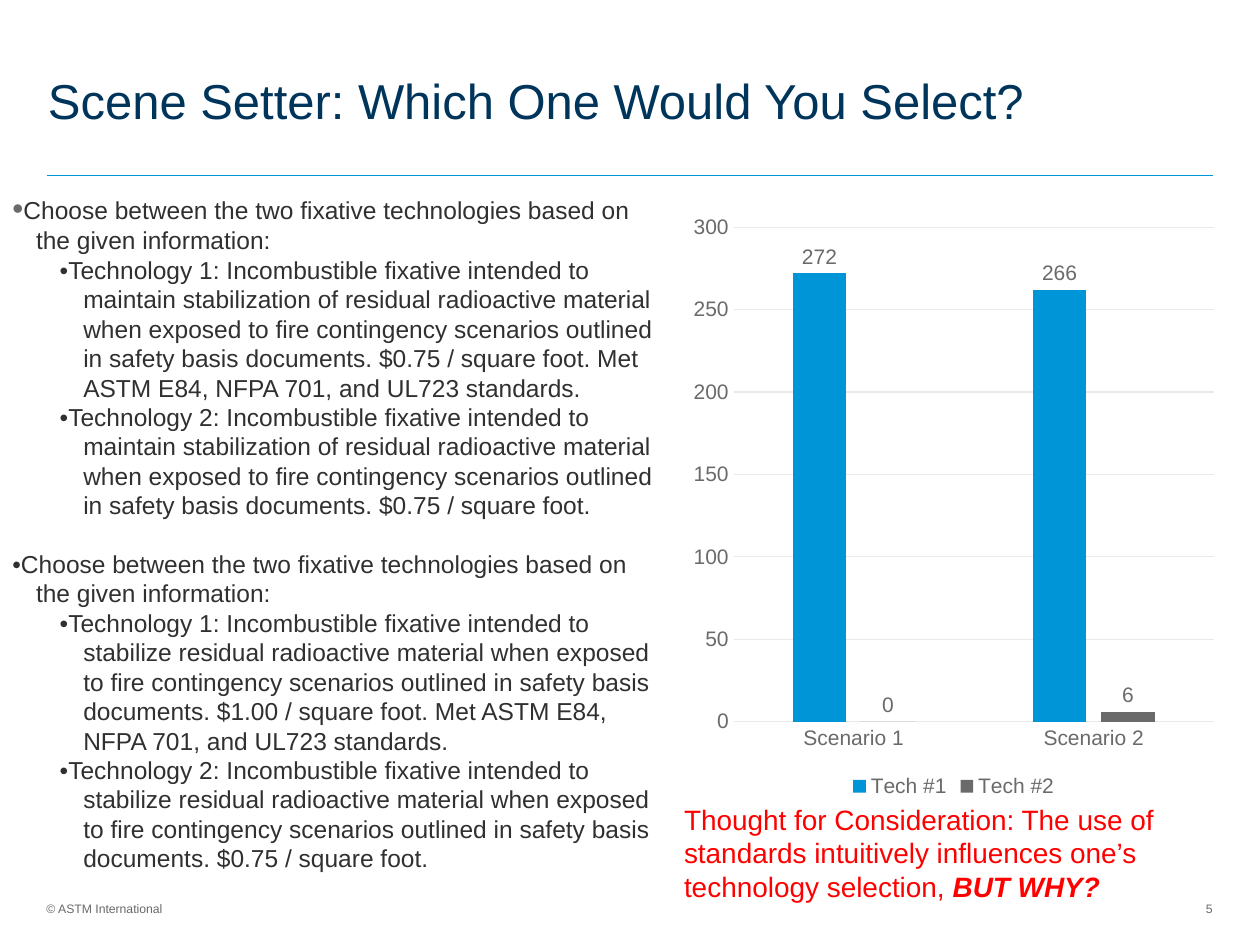
from lxml.etree import SubElement
from pptx import Presentation
from pptx.chart.data import CategoryChartData
from pptx.dml.color import RGBColor
from pptx.enum.chart import XL_CHART_TYPE, XL_LABEL_POSITION, XL_LEGEND_POSITION, XL_TICK_MARK
from pptx.enum.shapes import MSO_CONNECTOR
from pptx.enum.text import MSO_ANCHOR, PP_ALIGN
from pptx.oxml.ns import qn
from pptx.util import Pt

NAVY = RGBColor(0x00, 0x35, 0x5B)
BLUE = RGBColor(0x00, 0x95, 0xD6)
GRAY = RGBColor(0x6A, 0x6A, 0x6A)
INK = RGBColor(0x30, 0x30, 0x31)
PALE = RGBColor(0xE9, 0xE9, 0xE9)
RED = RGBColor(0xFF, 0x00, 0x00)


def style(font, size, color):
    font.name = "Arial"
    font.size = Pt(size)
    font.color.rgb = color


def add_text(left, top, width, height, inset=True):
    frame = slide.shapes.add_textbox(Pt(left), Pt(top), Pt(width), Pt(height)).text_frame
    frame.word_wrap = True
    if not inset:
        frame.margin_left = frame.margin_right = frame.margin_top = frame.margin_bottom = 0
    return frame


prs = Presentation()
prs.slide_width, prs.slide_height = Pt(720), Pt(540)
slide = prs.slides.add_slide(prs.slide_layouts[6])

# Title and rule
title = add_text(27.4, 25.2, 583, 67.7, inset=False)
title.vertical_anchor = MSO_ANCHOR.MIDDLE
heading = title.paragraphs[0]
heading.text = "Scene Setter: Which One Would You Select?"
heading.line_spacing = Pt(30)
style(heading.font, 28, NAVY)

rule = slide.shapes.add_connector(MSO_CONNECTOR.STRAIGHT, Pt(26.6), Pt(100), Pt(693.4), Pt(100))
rule.line.color.rgb = BLUE
rule.line.width = Pt(0.5)
SubElement(rule._element.spPr, qn("a:effectLst"))

# Footer
for left, top, width, text, align in [
    (26.6, 514.8, 81.4, "© ASTM International", PP_ALIGN.LEFT),
    (657.4, 515.2, 35.6, "5", PP_ALIGN.RIGHT),
]:
    footer = add_text(left, top, width, 9, inset=False).paragraphs[0]
    footer.text = text
    footer.alignment = align
    style(footer.font, 7, GRAY)

# Scenarios: purpose of the fixative, price of technology 1
scenarios = [
    ("maintain stabilization of residual radioactive material", "$0.75"),
    ("stabilize residual radioactive material", "$1.00"),
]
choices = add_text(0, 103.7, 384, 402.5)
for number, (purpose, price) in enumerate(scenarios):
    question = choices.add_paragraph() if number else choices.paragraphs[0]
    bullet = question.add_run()
    bullet.text = "•"
    question.add_run().text = "Choose between the two fixative technologies based on the given information:"
    style(question.font, 14, INK)
    if number:
        question.space_before = Pt(16.8)
    else:
        style(bullet.font, 18, GRAY)
    options = [(1, price, " Met ASTM E84, NFPA 701, and UL723 standards."), (2, "$0.75", "")]
    for technology, cost, standards in options:
        option = choices.add_paragraph()
        option.text = (
            f"•Technology {technology}: Incombustible fixative intended to {purpose} "
            "when exposed to fire contingency scenarios outlined in safety basis documents. "
            f"{cost} / square foot.{standards}"
        )
        style(option.font, 14, INK)
for paragraph in choices.paragraphs:
    indent = 40.5 if "•Technology" in paragraph.text else 13.5
    properties = paragraph._p.get_or_add_pPr()
    properties.set("marL", str(Pt(indent)))
    properties.set("indent", str(Pt(-13.5)))

# Chart of the votes
votes = CategoryChartData()
votes.categories = ["Scenario 1", "Scenario 2"]
votes.add_series("Tech #1", (272, 262))
votes.add_series("Tech #2", (0, 6))
chart = slide.shapes.add_chart(
    XL_CHART_TYPE.COLUMN_CLUSTERED, Pt(390.2), Pt(116.6), Pt(309.6), Pt(342), votes
).chart
style(chart.font, 12, GRAY)
chart.has_title = False
chart.has_legend = True
chart.legend.position = XL_LEGEND_POSITION.BOTTOM
chart.legend.include_in_layout = False
style(chart.legend.font, 12, GRAY)

for axis in (chart.category_axis, chart.value_axis):
    axis.major_tick_mark = axis.minor_tick_mark = XL_TICK_MARK.NONE
    style(axis.tick_labels.font, 12, GRAY)
chart.category_axis.format.line.color.rgb = PALE
chart.category_axis.format.line.width = Pt(0.75)
chart.value_axis.format.line.fill.background()
chart.value_axis.maximum_scale = 300
chart.value_axis.minimum_scale = 0
chart.value_axis.major_unit = 50
gridlines = chart.value_axis.major_gridlines.format.line
gridlines.color.rgb = PALE
gridlines.width = Pt(0.75)

plot = chart.plots[0]
plot.gap_width = 219
plot.overlap = -27
plot.vary_by_categories = False
for series, color in zip(plot.series, (BLUE, GRAY)):
    series.format.fill.solid()
    series.format.fill.fore_color.rgb = color
    labels = series.data_labels
    labels.show_value = True
    labels.position = XL_LABEL_POSITION.OUTSIDE_END
    style(labels.font, 12, GRAY)

# The second Tech #1 column carries its own label text
own_label = plot.series[0].points[1].data_label
own_label.text_frame.text = "266"
own_label.position = XL_LABEL_POSITION.OUTSIDE_END
style(own_label.text_frame.paragraphs[0].font, 12, GRAY)

# Closing thought
thought = add_text(383.8, 455, 316, 65.5).paragraphs[0]
thought.add_run().text = (
    "Thought for Consideration: The use of standards intuitively influences one’s technology selection, "
)
why = thought.add_run()
why.text = "BUT WHY?"
why.font.bold = why.font.italic = True
style(thought.font, 16, RED)

prs.save("out.pptx")
